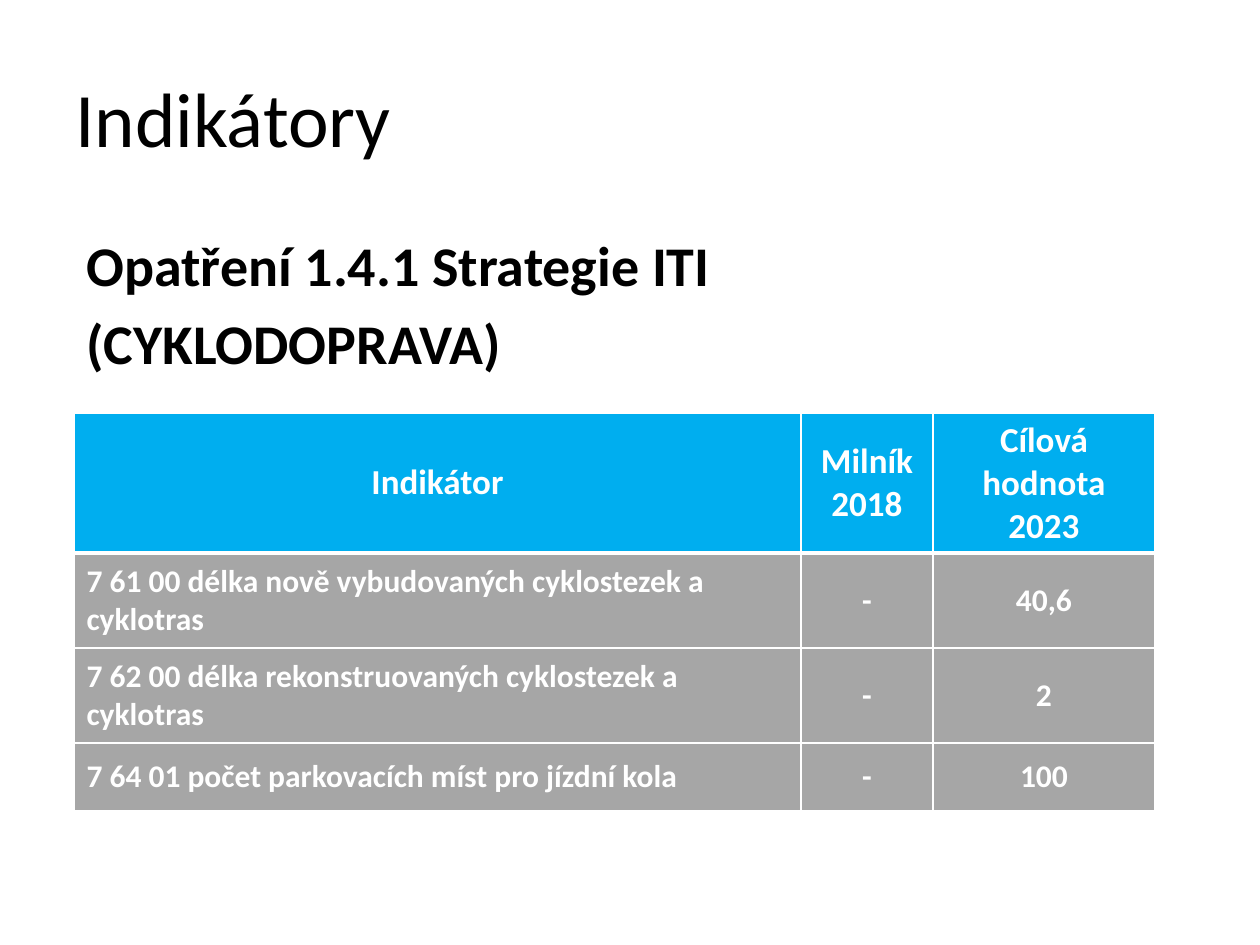
from dataclasses import dataclass

from lxml import etree
from pptx import Presentation
from pptx import util as u
from pptx.dml.color import RGBColor
from pptx.enum import text
from pptx.oxml.ns import qn

SCALE = 914400 / 126
FONT = "Calibri"
BLACK, WHITE, BLUE, GREY = "000000", "FFFFFF", "00AEEF", "A6A6A6"


@dataclass
class Heading:
    lines: list[str]
    left: int
    top: int
    width: int
    height: int
    size: int
    bold: bool
    anchor: text.MSO_ANCHOR


@dataclass
class Row:
    values: list[str]
    height: int
    size: int = 18
    fill: str = GREY
    label_align: text.PP_ALIGN = text.PP_ALIGN.LEFT
    rule: int = 1


COLUMNS = [727, 132, 222]
HEADINGS = [
    Heading(["Indikátory"], 63, 38, 1134, 158, 44, False, text.MSO_ANCHOR.MIDDLE),
    Heading(["Opatření 1.4.1 Strategie ITI", "(CYKLODOPRAVA)"],
            74, 224, 1134, 624, 32, True, text.MSO_ANCHOR.TOP),
]
ROWS = [
    Row(["Indikátor", "Milník 2018", "Cílová hodnota 2023"], 140, 20, BLUE,
        text.PP_ALIGN.CENTER, 3),
    Row(["7 61 00 délka nově vybudovaných cyklostezek a cyklotras", "-", "40,6"], 95),
    Row(["7 62 00 délka rekonstruovaných cyklostezek a cyklotras", "-", "2"], 95),
    Row(["7 64 01 počet parkovacích míst pro jízdní kola", "-", "100"], 68),
]


def px(value: int) -> int:
    return round(value * SCALE)


def color(value: str) -> RGBColor:
    return RGBColor.from_string(value)


def write(frame, lines: list[str], *, size: int, ink: str, bold: bool = False,
          align: text.PP_ALIGN = text.PP_ALIGN.LEFT) -> None:
    frame.word_wrap = True
    for index, line in enumerate(lines):
        para = frame.paragraphs[0] if index == 0 else frame.add_paragraph()
        para.alignment = align
        if index:
            para.space_before = u.Pt(size * 0.2)
        span = para.add_run()
        span.text = line
        span.font.name = FONT
        span.font.size = u.Pt(size)
        span.font.bold = bold
        span.font.color.rgb = color(ink)


def add_heading(page, heading: Heading) -> None:
    box = page.shapes.add_textbox(px(heading.left), px(heading.top),
                                  px(heading.width), px(heading.height))
    box.text_frame.vertical_anchor = heading.anchor
    write(box.text_frame, heading.lines, size=heading.size, ink=BLACK, bold=heading.bold)


def set_borders(cell, top: int, bottom: int) -> None:
    properties = cell._tc.get_or_add_tcPr()
    widths = {"a:lnL": 1, "a:lnR": 1, "a:lnT": top, "a:lnB": bottom}
    for index, (tag, width) in enumerate(widths.items()):
        line = etree.Element(qn(tag), w=str(u.Pt(width)))
        fill = etree.SubElement(line, qn("a:solidFill"))
        etree.SubElement(fill, qn("a:srgbClr"), val=WHITE)
        properties.insert(index, line)


def add_indicators(page, left: int, top: int) -> None:
    frame = page.shapes.add_table(len(ROWS), len(COLUMNS), px(left), px(top),
                                  px(sum(COLUMNS)), px(sum(row.height for row in ROWS)))
    table = frame.table
    for column, width in zip(table.columns, COLUMNS):
        column.width = px(width)
    rule_above = 1
    for index, row in enumerate(ROWS):
        table.rows[index].height = px(row.height)
        for position, value in enumerate(row.values):
            cell = table.cell(index, position)
            cell.vertical_anchor = text.MSO_ANCHOR.MIDDLE
            cell.fill.solid()
            cell.fill.fore_color.rgb = color(row.fill)
            set_borders(cell, rule_above, row.rule)
            align = text.PP_ALIGN.CENTER if position else row.label_align
            write(cell.text_frame, [value], size=row.size, ink=WHITE, bold=True, align=align)
        rule_above = row.rule


def main() -> None:
    deck = Presentation()
    deck.slide_width, deck.slide_height = px(1260), px(945)
    page = deck.slides.add_slide(deck.slide_layouts[6])
    for heading in HEADINGS:
        add_heading(page, heading)
    add_indicators(page, 74, 413)
    deck.save("out.pptx")


if __name__ == "__main__":
    main()
